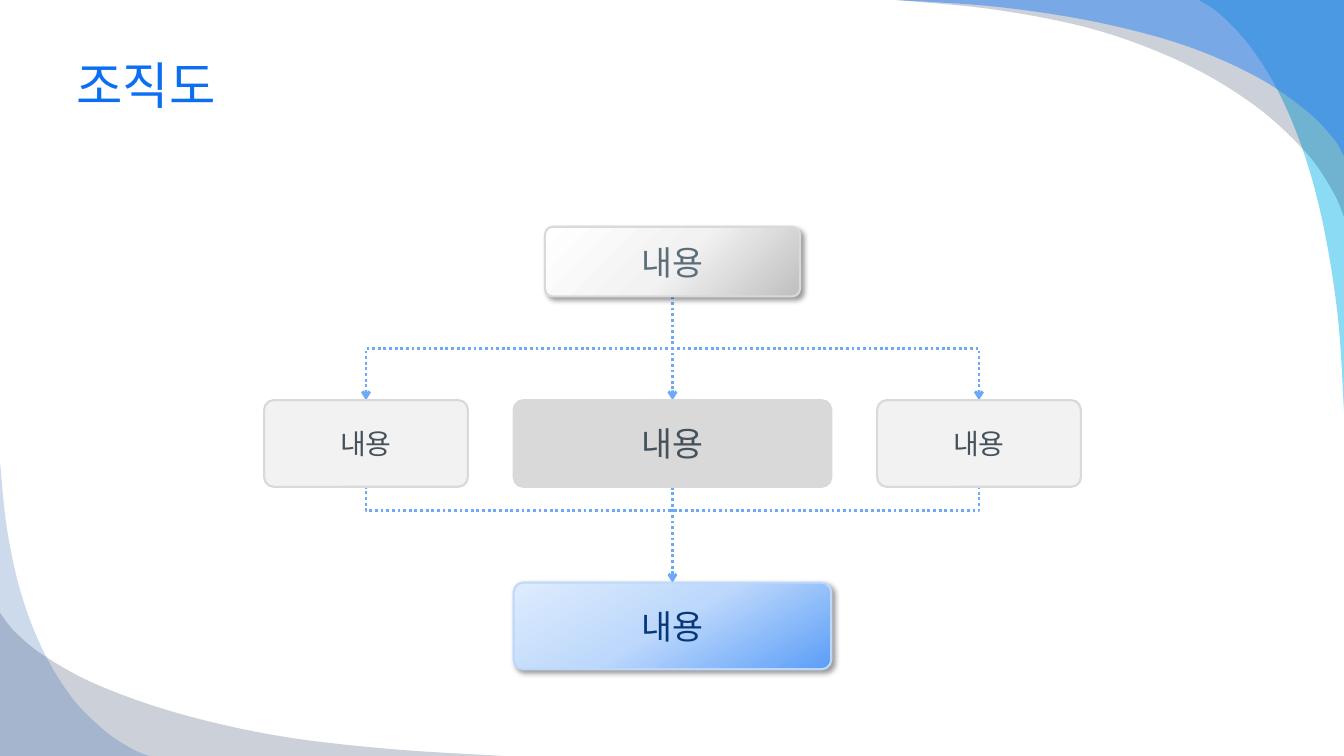
from pptx import Presentation
from pptx.dml.color import RGBColor
from pptx.enum.dml import MSO_LINE
from pptx.enum.shapes import MSO_CONNECTOR, MSO_SHAPE
from pptx.enum.text import MSO_ANCHOR, PP_ALIGN
from pptx.oxml import parse_xml
from pptx.oxml.ns import qn
from pptx.util import Inches, Pt

ROUNDED = MSO_SHAPE.ROUNDED_RECTANGLE
STRAIGHT, ELBOW = MSO_CONNECTOR.STRAIGHT, MSO_CONNECTOR.ELBOW
DOTTED = MSO_LINE.ROUND_DOT
MIDDLE, CENTER = MSO_ANCHOR.MIDDLE, PP_ALIGN.CENTER

FONT = "Karla"
NAMESPACE = 'xmlns:a="http://schemas.openxmlformats.org/drawingml/2006/main"'
COLORS = {
    "title": "0C6FF2", "connector": "6DA9F8",
    "cyan": "00B1E9", "navy": "021741", "blue": "247FF4", "steel": "084AA1",
    "border": "D9D9D9", "pale": "F2F2F2", "grey": "D9D9D9", "result_border": "BDD8FC",
    "top_text": "5C6E7A", "middle_text": "45525B", "result_text": "063879",
}
TOP_GRADIENT = (45, [(0, "FFFFFF"), (51, "F2F2F2"), (100, "BFBFBF")])
RESULT_GRADIENT = (60, [(0, "DEECFD"), (48, "BDD8FC"), (100, "5B9EF7")])

# Each swoosh: colour, opacity in percent, slide corner, points along its curved edge
SWOOSHES = [
    ("cyan", 45, (13.33, 0), [(11.89, 0), (12.1, 0.14), (12.4, 0.46), (12.69, 0.93),
                              (12.94, 1.54), (13.13, 2.26), (13.27, 3.15), (13.33, 4.08)]),
    ("navy", 20, (13.33, 0), [(8.89, 0), (9.9, 0.1), (10.88, 0.3), (11.75, 0.63),
                              (12.45, 1.05), (12.96, 1.52), (13.22, 1.9), (13.33, 2.15)]),
    ("blue", 49, (13.33, 0), [(8.89, 0), (9.91, 0.07), (10.88, 0.22), (11.75, 0.45),
                              (12.46, 0.76), (12.96, 1.1), (13.23, 1.38), (13.33, 1.55)]),
    ("navy", 20, (0, 7.5), [(0, 6.08), (0.16, 6.28), (0.46, 6.52), (0.98, 6.8),
                            (1.78, 7.08), (2.76, 7.3), (3.86, 7.43), (5, 7.5)]),
    ("steel", 20, (0, 7.5), [(0, 4.58), (0.07, 5.25), (0.21, 5.89), (0.43, 6.46),
                             (0.72, 6.93), (1.04, 7.25), (1.31, 7.43), (1.48, 7.5)]),
]

# Chart geometry
CENTER_X, SIDE_OFFSET = 6.67, 3.04
LEFT_X, RIGHT_X = CENTER_X - SIDE_OFFSET, CENTER_X + SIDE_OFFSET
TOP_Y, MIDDLE_Y, RESULT_Y = 2.25, 3.97, 5.78
TOP_HEIGHT, BOX_HEIGHT = 0.69, 0.86
TOP_BOTTOM, MIDDLE_BOTTOM = TOP_Y + TOP_HEIGHT, MIDDLE_Y + BOX_HEIGHT


def rgb(name):
    return RGBColor.from_string(COLORS[name])


def smooth(points, steps=8):
    """Catmull-Rom curve through the points."""
    padded = [points[0], *points, points[-1]]
    curve = [points[0]]
    for a, b, c, d in zip(padded, padded[1:], padded[2:], padded[3:]):
        for step in range(1, steps + 1):
            t = step / steps
            curve.append(tuple(
                (2 * q + (r - p) * t + (2 * p - 5 * q + 4 * r - s) * t ** 2
                 + (3 * q - p - 3 * r + s) * t ** 3) / 2
                for p, q, r, s in zip(a, b, c, d)))
    return curve


def add_swoosh(slide, color, opacity, corner, edge):
    outline = [(Inches(x), Inches(y)) for x, y in smooth(edge) + [corner]]
    builder = slide.shapes.build_freeform(*outline[0], scale=1.0)
    builder.add_line_segments(outline[1:], close=True)
    shape = builder.convert_to_shape()
    shape.shadow.inherit = False
    shape.line.fill.background()
    shape.fill.solid()
    shape.fill.fore_color.rgb = rgb(color)
    solid = shape._element.spPr.find(qn("a:solidFill"))
    solid[0].append(parse_xml(f'<a:alpha {NAMESPACE} val="{opacity * 1000}"/>'))


def set_text(shape, text, size, color, alignment=None):
    frame = shape.text_frame
    frame.word_wrap = True
    frame.vertical_anchor = MIDDLE
    paragraph = frame.paragraphs[0]
    paragraph.text = text
    paragraph.alignment = alignment
    paragraph.font.name = FONT
    paragraph.font.size = Pt(size)
    paragraph.font.color.rgb = rgb(color)


def add_title(slide, text):
    title = slide.shapes.add_textbox(Inches(0.66), Inches(0.33), Inches(12), Inches(1.01))
    set_text(title, text, 36, "title")


def set_gradient(shape, angle, stops):
    shape.fill.gradient()
    properties = shape._element.spPr
    stop_xml = "".join(f'<a:gs pos="{position * 1000}"><a:srgbClr val="{color}"/></a:gs>'
                       for position, color in stops)
    properties.replace(properties.find(qn("a:gradFill")), parse_xml(
        f'<a:gradFill {NAMESPACE} rotWithShape="1"><a:gsLst>{stop_xml}</a:gsLst>'
        f'<a:lin ang="{angle * 60000}" scaled="0"/></a:gradFill>'))


def add_shadow(shape):
    shape._element.spPr.find(qn("a:effectLst")).append(parse_xml(
        f'<a:outerShdw {NAMESPACE} blurRad="{Pt(4)}" dist="{Pt(3)}" dir="2700000" '
        'algn="tl" rotWithShape="0"><a:srgbClr val="000000"><a:alpha val="40000"/>'
        '</a:srgbClr></a:outerShdw>'))


def add_box(slide, center_x, top, width, height, text, size, text_color,
            fill=None, gradient=None, border="border"):
    box = slide.shapes.add_shape(ROUNDED, Inches(center_x - width / 2), Inches(top),
                                 Inches(width), Inches(height))
    box.adjustments[0] = 0.11
    box.shadow.inherit = False
    box.line.color.rgb = rgb(border)
    box.line.width = Pt(1.5)
    if gradient:
        set_gradient(box, *gradient)
        add_shadow(box)
    else:
        box.fill.solid()
        box.fill.fore_color.rgb = rgb(fill)
    set_text(box, text, size, text_color, CENTER)


def style_connector(connector, arrow):
    connector.line.color.rgb = rgb("connector")
    connector.line.width = Pt(2)
    connector.line.dash_style = DOTTED
    properties = connector._element.spPr
    if arrow:
        properties.find(qn("a:ln")).append(parse_xml(f'<a:tailEnd {NAMESPACE} type="arrow"/>'))
    properties.append(parse_xml(f"<a:effectLst {NAMESPACE}/>"))


def add_down_arrow(slide, x, start_y, end_y):
    connector = slide.shapes.add_connector(STRAIGHT, Inches(x), Inches(start_y),
                                           Inches(x), Inches(end_y))
    style_connector(connector, arrow=True)


def add_elbow(slide, start, end, bend, arrow=True):
    """Elbow that leaves downwards: a quarter-turned box, flipped when it runs right."""
    (start_x, start_y), (end_x, end_y) = start, end
    middle_x, middle_y = (start_x + end_x) / 2, (start_y + end_y) / 2
    half_drop, half_span = (end_y - start_y) / 2, abs(end_x - start_x) / 2
    runs_right = end_x > start_x
    side = -1 if runs_right else 1
    connector = slide.shapes.add_connector(
        ELBOW, Inches(middle_x - side * half_drop), Inches(middle_y - half_span),
        Inches(middle_x + side * half_drop), Inches(middle_y + half_span))
    properties = connector._element.spPr
    properties.find(qn("a:xfrm")).set("rot", str((270 if runs_right else 90) * 60000))
    guides = properties.find(qn("a:prstGeom")).get_or_add_avLst()
    guides.append(parse_xml(
        f'<a:gd {NAMESPACE} name="adj1" fmla="val {round(bend * 100000)}"/>'))
    style_connector(connector, arrow)


def main():
    presentation = Presentation()
    presentation.slide_width, presentation.slide_height = Inches(13.33), Inches(7.5)
    slide = presentation.slides.add_slide(presentation.slide_layouts[6])

    # Corner decoration and title
    for swoosh in SWOOSHES:
        add_swoosh(slide, *swoosh)
    add_title(slide, "조직도")

    # Connectors
    add_down_arrow(slide, CENTER_X, TOP_BOTTOM, MIDDLE_Y)
    add_down_arrow(slide, CENTER_X, MIDDLE_BOTTOM, RESULT_Y)
    for side_x in (LEFT_X, RIGHT_X):
        add_elbow(slide, (CENTER_X, TOP_BOTTOM), (side_x, MIDDLE_Y), bend=0.5)
    add_elbow(slide, (LEFT_X, MIDDLE_BOTTOM - 0.01), (RIGHT_X, MIDDLE_BOTTOM),
              bend=25, arrow=False)

    # Boxes
    add_box(slide, CENTER_X, TOP_Y, 2.53, TOP_HEIGHT, "내용", 24, "top_text",
            gradient=TOP_GRADIENT)
    add_box(slide, CENTER_X, MIDDLE_Y, 3.15, BOX_HEIGHT, "내용", 24, "middle_text", fill="grey")
    for side_x in (LEFT_X, RIGHT_X):
        add_box(slide, side_x, MIDDLE_Y, 2.02, BOX_HEIGHT, "내용", 20, "middle_text", fill="pale")
    add_box(slide, CENTER_X, RESULT_Y, 3.15, BOX_HEIGHT, "내용", 24, "result_text",
            gradient=RESULT_GRADIENT, border="result_border")

    presentation.save("out.pptx")


if __name__ == "__main__":
    main()
